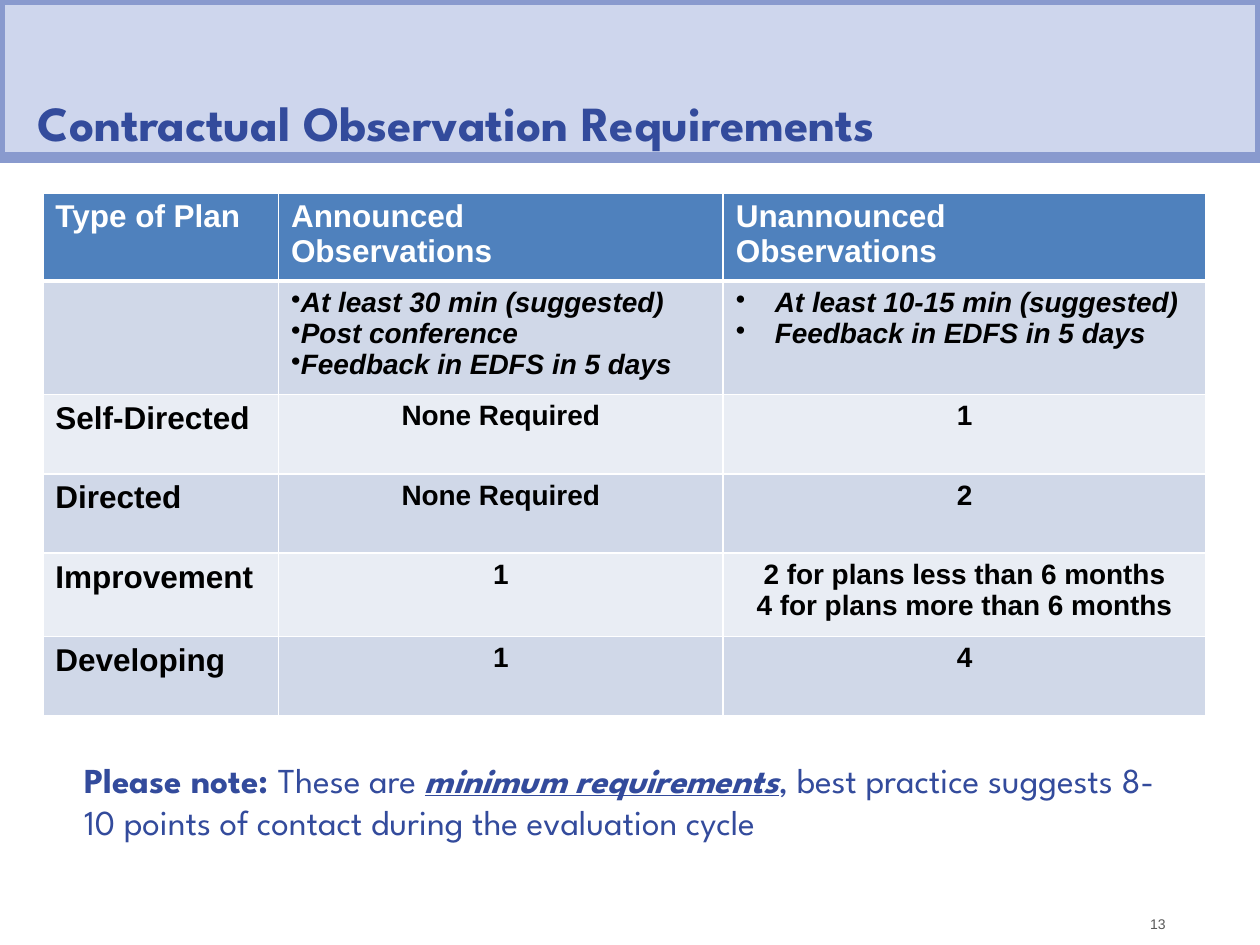
from dataclasses import dataclass
from typing import Any

from lxml.etree import SubElement
from pptx import Presentation
from pptx.dml.color import RGBColor
from pptx.enum.shapes import MSO_SHAPE
from pptx.enum.text import MSO_ANCHOR, PP_ALIGN
from pptx.oxml.ns import qn
from pptx.util import Inches, Pt

NAVY, WHITE, BLACK = "334B9C", "FFFFFF", "000000"
HEAD, DARK, LIGHT = "4F81BD", "D0D8E8", "E9EDF4"
BRAND = "League Spartan"


@dataclass
class Style:
    size: float
    ink: str
    face: str = "Arial"
    bold: bool = False
    slant: bool = False
    under: bool = False


@dataclass
class Cell:
    lines: list[str]
    style: Style
    align: PP_ALIGN = PP_ALIGN.LEFT
    dent: float | None = None  # left margin of a bullet list


def color(code: str) -> RGBColor:
    return RGBColor.from_string(code)


def apply(item: Any, form: dict[str, Any]) -> None:
    for key, val in form.items():
        setattr(item, key, val)


def write(para: Any, text: str, style: Style) -> None:
    run = para.add_run()
    run.text = text
    apply(run.font, {"size": Pt(style.size), "name": style.face, "bold": style.bold,
                     "italic": style.slant, "underline": style.under})
    run.font.color.rgb = color(style.ink)


def indent(para: Any, left: float, first: float) -> Any:
    props = para._p.get_or_add_pPr()
    props.set("marL", str(Inches(left)))
    props.set("indent", str(Inches(first)))
    return props


def edge(cell: Any, base: float) -> None:
    props = cell._tc.get_or_add_tcPr()
    for side, width in {"L": 1, "R": 1, "T": 1, "B": base}.items():
        line = SubElement(props, qn(f"a:ln{side}"), w=str(Pt(width)))
        fill = SubElement(line, qn("a:solidFill"))
        SubElement(fill, qn("a:srgbClr"), val=WHITE)


def fill_cell(cell: Any, data: Cell, tint: str, base: float) -> None:
    edge(cell, base)
    cell.fill.solid()
    cell.fill.fore_color.rgb = color(tint)
    for num, text in enumerate(data.lines):
        para = cell.text_frame.add_paragraph() if num else cell.text_frame.paragraphs[0]
        para.alignment = data.align
        if data.dent is not None:
            SubElement(indent(para, data.dent, -0.31), qn("a:buChar"), char="•")
        write(para, text, data.style)


def text_box(slide: Any, box: tuple, runs: list[tuple[str, Style]], align: PP_ALIGN) -> Any:
    frame = slide.shapes.add_textbox(*map(Inches, box)).text_frame
    apply(frame, {"word_wrap": True, "vertical_anchor": MSO_ANCHOR.MIDDLE})
    para = frame.paragraphs[0]
    para.alignment = align
    for text, style in runs:
        write(para, text, style)
    return para


# Table content
top = Style(18, WHITE, bold=True)
name = Style(18, BLACK, bold=True)
plain = Style(16, BLACK, bold=True)
lean = Style(16, BLACK, bold=True, slant=True)
plans = [
    ("Self-Directed", ["None Required"], ["1"]),
    ("Directed", ["None Required"], ["2"]),
    ("Improvement", ["1"], ["2 for plans less than 6 months",
                            "4 for plans more than 6 months"]),
    ("Developing", ["1"], ["4"]),
]
rows = [
    [Cell(["Type of Plan"], top), Cell(["Announced", "Observations"], top),
     Cell(["Unannounced", "Observations"], top)],
    [Cell([], name),
     Cell(["At least 30 min (suggested)", "Post conference",
           "Feedback in EDFS in 5 days"], lean, dent=0.02),
     Cell(["At least 10-15 min (suggested)", "Feedback in EDFS in 5 days"], lean, dent=0.31)],
]
for plan, *counts in plans:
    rows.append([Cell([plan], name)] + [Cell(c, plain, PP_ALIGN.CENTER) for c in counts])
wide = [1.87, 3.53, 3.83]
high = [0.7, 0.9, 0.63, 0.63, 0.66, 0.63]

deck = Presentation()
apply(deck, {"slide_width": Inches(10), "slide_height": Inches(7.5)})
slide = deck.slides.add_slide(deck.slide_layouts[6])

# Page number
text_box(slide, (8.78, 7.21, 0.57, 0.24), [("13", Style(8, "595959"))], PP_ALIGN.RIGHT)

# Title band
band = slide.shapes.add_shape(MSO_SHAPE.RECTANGLE, 0, 0, Inches(10), Inches(1.25))
band.shadow.inherit = False
band.fill.solid()
band.fill.fore_color.rgb = color("CED6ED")
band.line.color.rgb = color("899ACE")
band.line.width = Pt(6)
apply(band.text_frame, {"word_wrap": True, "vertical_anchor": MSO_ANCHOR.BOTTOM,
                        "margin_left": 0, "margin_top": 0,
                        "margin_right": Inches(0.5), "margin_bottom": Inches(0.05)})
title = band.text_frame.paragraphs[0]
apply(title, {"alignment": PP_ALIGN.LEFT, "line_spacing": Pt(26)})
indent(title, 0.8, -0.5)
write(title, "Contractual Observation Requirements", Style(28, NAVY, BRAND, bold=True))

# Observation table
grid = slide.shapes.add_table(len(rows), len(wide), Inches(0.34), Inches(1.53),
                              Inches(sum(wide)), Inches(sum(high))).table
for col, width in zip(grid.columns, wide):
    col.width = Inches(width)
for r, (row, height) in enumerate(zip(rows, high)):
    grid.rows[r].height = Inches(height)
    tint = HEAD if r == 0 else DARK if r % 2 else LIGHT
    for c, data in enumerate(row):
        fill_cell(grid.cell(r, c), data, tint, 1 if r else 3)

# Closing note
soft = Style(20, NAVY, BRAND)
note = text_box(slide, (0.57, 6.03, 8.81, 0.64), [
    ("Please note: ", Style(20, NAVY, BRAND, bold=True)),
    ("These are ", soft),
    ("minimum requirements", Style(20, NAVY, BRAND, bold=True, slant=True, under=True)),
    (", best practice suggests 8-10 points of contact during the evaluation cycle", soft),
], PP_ALIGN.LEFT)
note.space_after = Pt(6)

deck.save("out.pptx")
